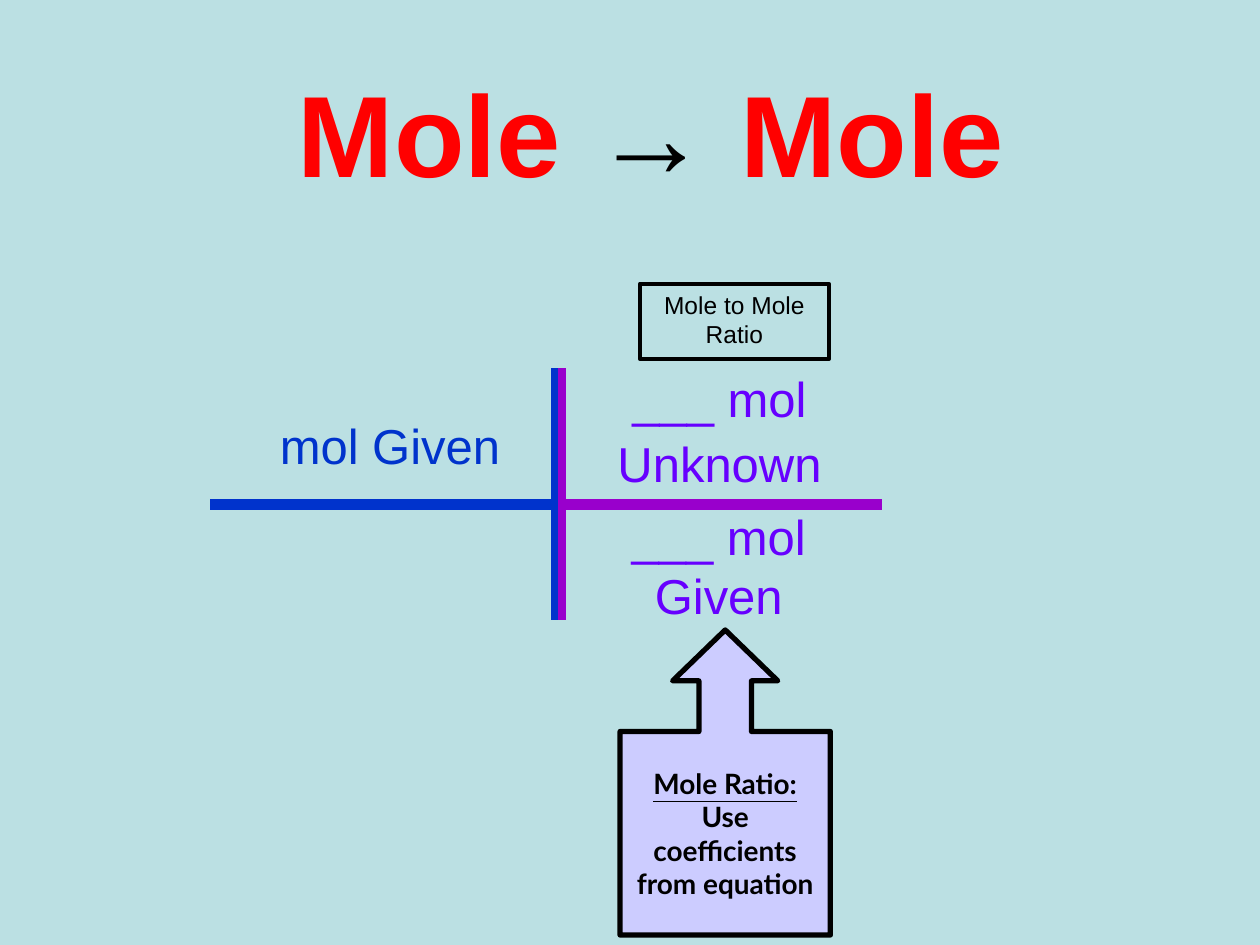
from collections import namedtuple
from dataclasses import dataclass

from lxml import etree
from pptx import Presentation, util as u
from pptx.dml.color import RGBColor
from pptx.enum import shapes, text

Box = namedtuple("Box", "left top width height")


@dataclass(frozen=True)
class Theme:
    """Colours, fonts and type sizes of the slide."""
    background: str = "BBE0E3"
    accent: str = "FF0000"
    ink: str = "000000"
    given: str = "0033CC"
    ratio: str = "9900CC"
    ratio_text: str = "6600FF"
    callout: str = "CCCCFF"
    font: str = "Arial"
    callout_font: str = "Lato"
    title_size: float = 66
    term_size: float = 28
    callout_size: float = 16
    label_size: float = 14


THEME = Theme()


def color(value):
    """Turn a hex value into a colour."""
    return RGBColor.from_string(value)


def lengths(values):
    """Turn centimetre values into lengths."""
    return [u.Cm(value) for value in values]


def inside(box, left, top, width, height):
    """Return a box placed relative to the corner of another box."""
    return Box(box.left + left, box.top + top, width, height)


def write(shape, spans, size, font=THEME.font, anchor=text.MSO_ANCHOR.TOP, **spacing):
    """Write one centred paragraph of (words, colour, format) spans."""
    frame = shape.text_frame
    frame.word_wrap = True
    frame.vertical_anchor = anchor
    para = frame.paragraphs[0]
    for name, value in {"alignment": text.PP_ALIGN.CENTER, **spacing}.items():
        setattr(para, name, value)
    for words, hue, formats in spans:
        span = para.add_run()
        span.text = words
        span.font.color.rgb = color(hue)
        for name, value in {"name": font, "size": u.Pt(size), **formats}.items():
            setattr(span.font, name, value)


def add_rule(page, ends, hue, weight):
    """Draw a straight rule between two points."""
    rule = page.shapes.add_connector(shapes.MSO_CONNECTOR.STRAIGHT, *lengths(ends))
    rule.line.color.rgb = color(hue)
    rule.line.width = u.Pt(weight)
    properties = rule.element.spPr
    etree.SubElement(properties, properties.nsmap["a"].join("{}") + "effectLst")


def add_outlined(page, kind, box, weight, fill=None):
    """Draw a black-outlined shape with an optional fill."""
    shape = page.shapes.add_shape(kind, *lengths(box))
    shape.shadow.inherit = False
    shape.line.color.rgb = color(THEME.ink)
    shape.line.width = u.Pt(weight)
    if fill:
        shape.fill.solid()
        shape.fill.fore_color.rgb = color(fill)
    else:
        shape.fill.background()
    return shape


def add_title(page, box):
    """Place the title with its arrow."""
    bold = {"bold": True}
    spans = [("Mole ", THEME.accent, bold), ("→ ", THEME.ink, bold), ("Mole", THEME.accent, bold)]
    write(page.shapes.add_textbox(*lengths(box)), spans, THEME.title_size,
          anchor=text.MSO_ANCHOR.MIDDLE)


def add_conversion(page, box):
    """Place the conversion grid, its terms and the ratio label."""
    upper, middle, lower = (box.top + offset for offset in (1.7, 4.45, 6.78))
    given_bar, ratio_bar = box.left + 6.94, box.left + 7.09
    add_rule(page, (given_bar, upper, given_bar, lower), THEME.given, 4.5)
    add_rule(page, (box.left, middle, given_bar + 0.05, middle), THEME.given, 6)
    add_rule(page, (ratio_bar + 0.05, middle, box.left + box.width, middle), THEME.ratio, 6)
    add_rule(page, (ratio_bar, upper, ratio_bar, lower), THEME.ratio, 4.5)

    terms = [
        (" mol Given", THEME.given, (0.41, 2.54, 6.15, 1.45), 1),
        ("___ mol Unknown", THEME.ratio_text, (7.19, 1.47, 6.15, 2.87), 1.1),
        ("___ mol Given", THEME.ratio_text, (7.39, 4.37, 5.72, 2.62), 1),
    ]
    for words, hue, place, spacing in terms:
        term = page.shapes.add_textbox(*lengths(inside(box, *place)))
        write(term, [(words, hue, {})], THEME.term_size,
              space_before=u.Pt(3), line_spacing=spacing)

    label = add_outlined(page, shapes.MSO_SHAPE.RECTANGLE,
                         inside(box, 8.66, 0, 3.81, 1.52), 2.25)
    write(label, [("Mole to Mole Ratio", THEME.ink, {})], THEME.label_size,
          space_before=u.Pt(1.5))


def add_callout(page, box):
    """Place the arrow callout that explains the ratio."""
    callout = add_outlined(page, shapes.MSO_SHAPE.UP_ARROW_CALLOUT, box, 3, THEME.callout)
    for index, value in enumerate((0.25, 0.25, 0.242, 0.667)):
        callout.adjustments[index] = value
    spans = [
        ("Mole Ratio:", THEME.ink, {"bold": True, "underline": True}),
        (" Use coefficients from equation", THEME.ink, {"bold": True}),
    ]
    write(callout, spans, THEME.callout_size, THEME.callout_font, text.MSO_ANCHOR.MIDDLE)


def main():
    """Build and save the slide."""
    deck = Presentation()
    deck.slide_width, deck.slide_height = lengths((25.4, 19.05))
    page = deck.slides.add_slide(deck.slide_layouts[6])
    page.background.fill.solid()
    page.background.fill.fore_color.rgb = color(THEME.background)
    add_title(page, Box(0.84, 0, 24.56, 5.28))
    add_conversion(page, Box(4.24, 5.72, 13.54, 6.99))
    add_callout(page, Box(12.5, 12.7, 4.24, 6.15))
    deck.save("out.pptx")


if __name__ == "__main__":
    main()
